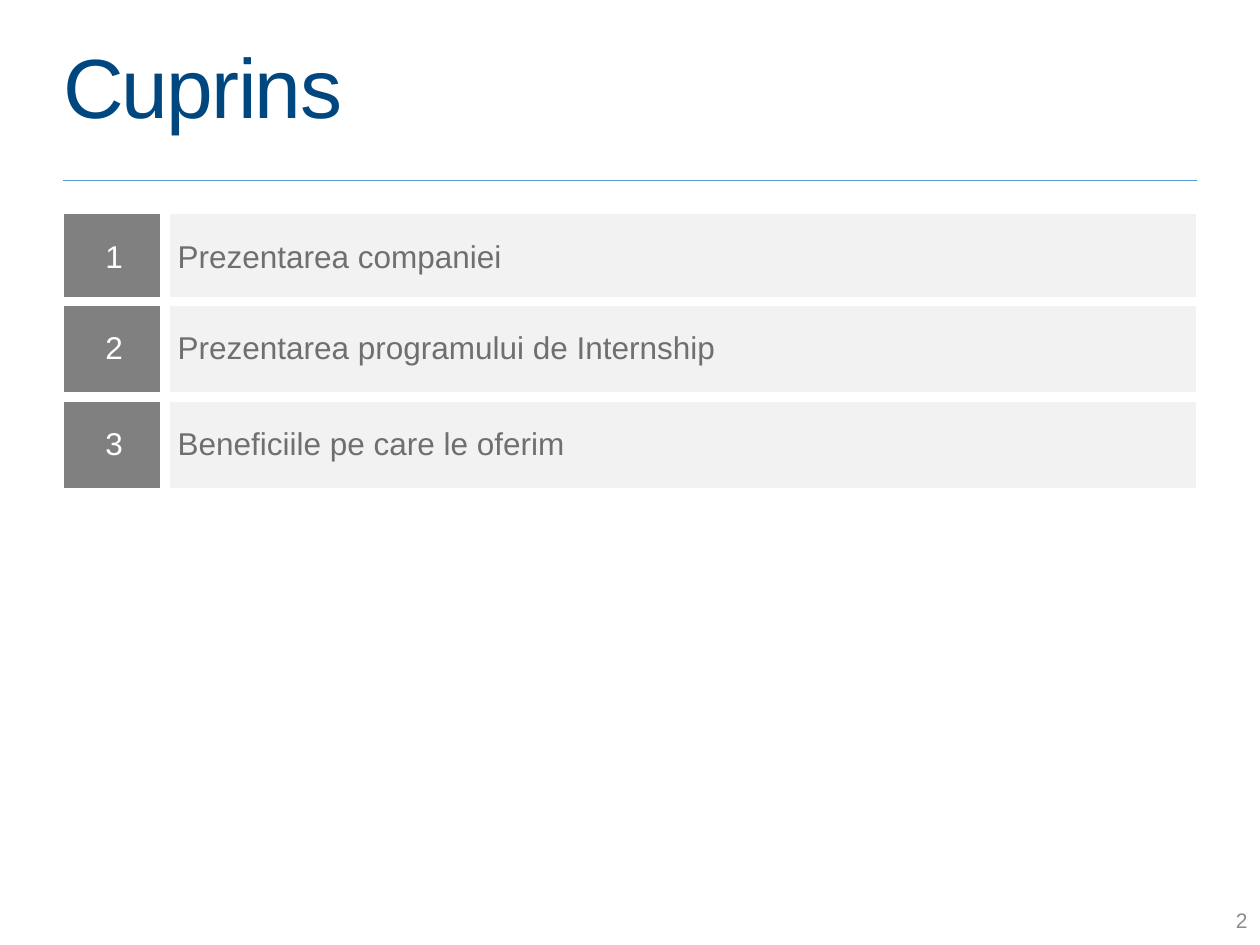
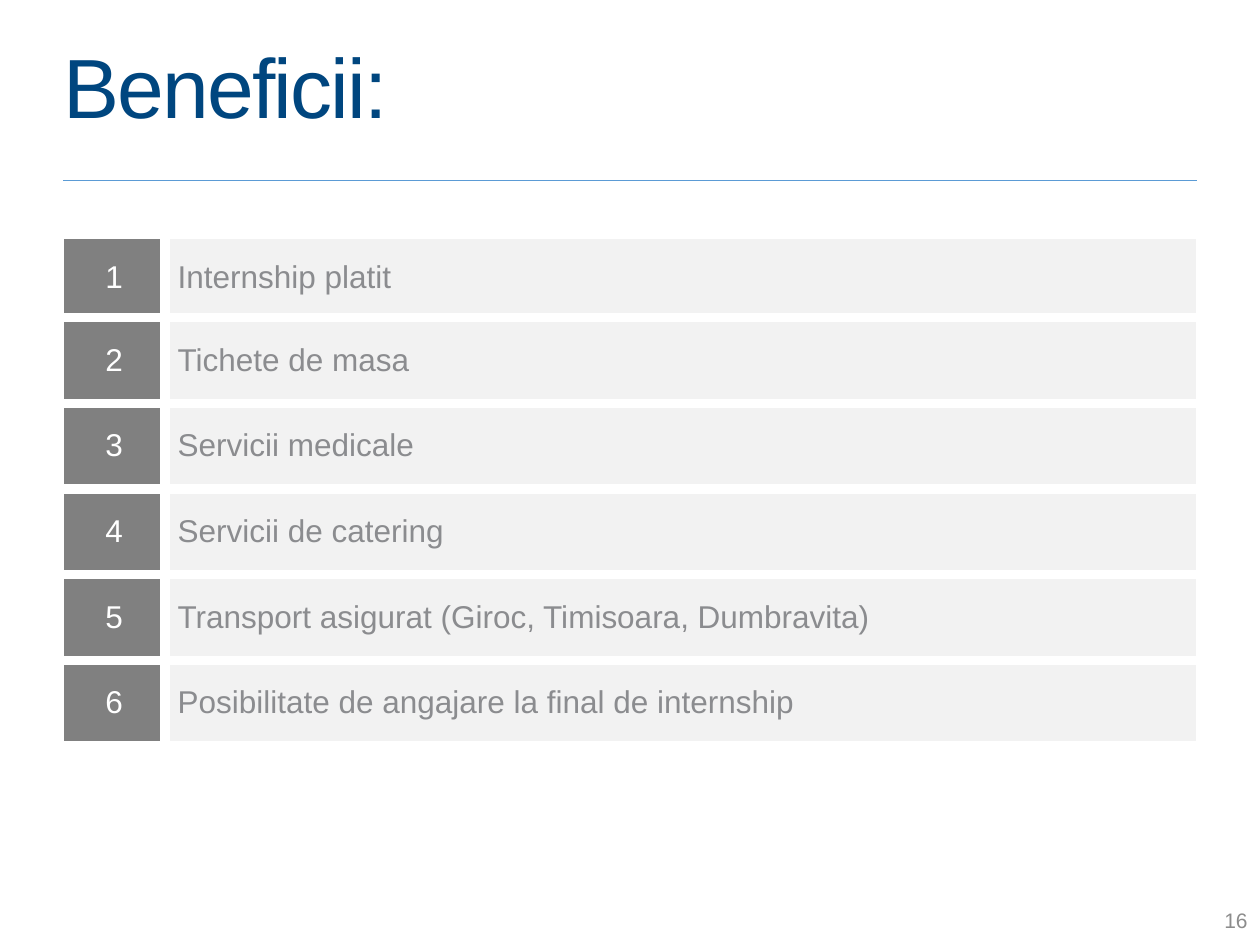
from dataclasses import dataclass

from lxml import etree
from pptx import Presentation
from pptx import util as u
from pptx.dml import color
from pptx.enum import shapes, text
from pptx.oxml import ns


@dataclass(frozen=True)
class Theme:
    font: str = "Arial"
    title: str = "00467F"
    rule: str = "5B9BD5"
    page: str = "8C8C8C"
    badge: str = "808080"
    band: str = "F2F2F2"
    white: str = "FFFFFF"
    title_size: int = 48
    row_size: int = 18
    page_size: int = 12
    thin: float = 0.5
    edge: int = 1
    gap: int = 6


@dataclass(frozen=True)
class Topic:
    title: str
    page: int
    top: float
    first: float
    rest: float
    ink: str
    rows: tuple[str, ...]


THEME = Theme()
LEFT = 0.5
WIDTHS = (0.81, 8.19)
WIDE = sum(WIDTHS)
RULE_Y = 1.43

TOPICS = (
    Topic("Cuprins", 2, 1.69, 0.7, 0.76, "6F706E", (
        "Prezentarea companiei",
        "Prezentarea programului de Internship",
        "Beneficiile pe care le oferim",
    )),
    Topic("Beneficii:", 16, 1.89, 0.63, 0.68, "8B8C8F", (
        "Internship platit",
        "Tichete de masa",
        "Servicii medicale",
        "Servicii de catering",
        "Transport asigurat (Giroc, Timisoara, Dumbravita)",
        "Posibilitate de angajare la final de internship",
    )),
)


def rgb(ink: str) -> color.RGBColor:
    return color.RGBColor.from_string(ink)


def write(para, words: str, size: int, ink: str, align=text.PP_ALIGN.LEFT):
    para.alignment = align
    run = para.add_run()
    run.text = words
    run.font.name = THEME.font
    run.font.size = u.Pt(size)
    run.font.color.rgb = rgb(ink)
    return run


def add_box(slide, left: float, top: float, width: float, height: float):
    box = slide.shapes.add_textbox(
        u.Inches(left), u.Inches(top), u.Inches(width), u.Inches(height))
    frame = box.text_frame
    frame.word_wrap = True
    frame.vertical_anchor = text.MSO_ANCHOR.MIDDLE
    return frame


def add_rule(slide) -> None:
    y = u.Inches(RULE_Y)
    rule = slide.shapes.add_connector(
        shapes.MSO_CONNECTOR.STRAIGHT,
        u.Inches(LEFT), y, u.Inches(LEFT + WIDE), y)
    rule.line.color.rgb = rgb(THEME.rule)
    rule.line.width = u.Pt(THEME.thin)
    etree.SubElement(rule._element.spPr, ns.qn("a:effectLst"))


def add_frame(slide, topic: Topic) -> None:
    add_rule(slide)
    head = add_box(slide, LEFT, 0, 8.62, 1.45)
    head.margin_left = 0
    para = head.paragraphs[0]
    para.line_spacing = 0.9
    run = write(para, topic.title, THEME.title_size, THEME.title)
    run.font._element.set("spc", "-100")
    foot = add_box(slide, 7.75, 7.1, 2.25, 0.4)
    write(foot.paragraphs[0], str(topic.page), THEME.page_size,
          THEME.page, text.PP_ALIGN.RIGHT)


def set_edges(cell, edges: dict[str, int]) -> None:
    props = cell._tc.get_or_add_tcPr()
    for side, width in edges.items():
        line = etree.SubElement(
            props, ns.qn(f"a:ln{side}"), w=str(u.Pt(width)))
        fill = etree.SubElement(line, ns.qn("a:solidFill"))
        etree.SubElement(fill, ns.qn("a:srgbClr"), val=THEME.white)


def fill_cell(cell, words: str, ink: str, back: str, align,
              edges: dict[str, int]) -> None:
    set_edges(cell, edges)
    cell.fill.solid()
    cell.fill.fore_color.rgb = rgb(back)
    cell.vertical_anchor = text.MSO_ANCHOR.MIDDLE
    write(cell.text_frame.paragraphs[0], words, THEME.row_size, ink, align)


def add_list(slide, topic: Topic) -> None:
    count = len(topic.rows)
    heights = [topic.first] + [topic.rest] * (count - 1)
    table = slide.shapes.add_table(
        count, len(WIDTHS), u.Inches(LEFT), u.Inches(topic.top),
        u.Inches(WIDE), u.Inches(sum(heights))).table
    table.first_row = False
    table.horz_banding = False
    for col, width in zip(table.columns, WIDTHS):
        col.width = u.Inches(width)
    for i, (words, height) in enumerate(zip(topic.rows, heights)):
        table.rows[i].height = u.Inches(height)
        ends = {"T": THEME.gap, "B": THEME.gap} if i else {"B": THEME.gap}
        fill_cell(table.cell(i, 0), str(i + 1), THEME.white, THEME.badge,
                  text.PP_ALIGN.CENTER,
                  {"L": THEME.edge, "R": THEME.gap, **ends})
        fill_cell(table.cell(i, 1), words, topic.ink, THEME.band,
                  text.PP_ALIGN.LEFT,
                  {"L": THEME.gap, "R": THEME.edge, **ends})


def main() -> None:
    deck = Presentation()
    deck.slide_width = u.Inches(10)
    deck.slide_height = u.Inches(7.5)
    for topic in TOPICS:
        slide = deck.slides.add_slide(deck.slide_layouts[6])
        add_frame(slide, topic)
        add_list(slide, topic)
    deck.save("out.pptx")


if __name__ == "__main__":
    main()
